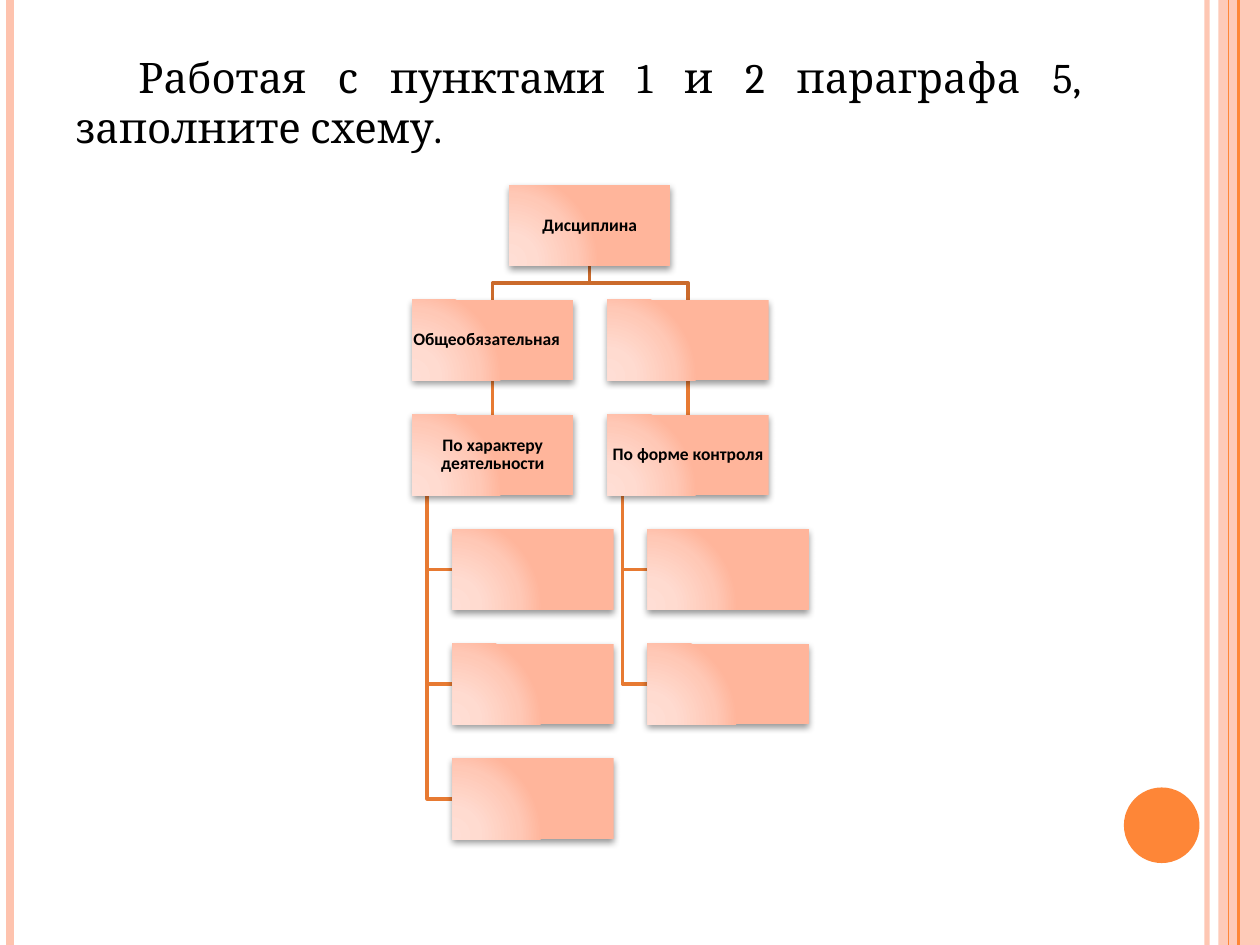
"""Build a slide with a discipline chart whose empty boxes are to be filled in."""
from typing import NamedTuple

from lxml import etree
from pptx import Presentation
from pptx import util as u
from pptx.dml.color import RGBColor
from pptx.enum import shapes, text
from pptx.oxml.ns import qn

BOX_WIDTH, BOX_HEIGHT = 1.28, 0.64
CHART_TOP, ROW_STEP = 1.47, 0.91
ROOT_LEFT, CHILD_INDENT, TRUNK_INDENT = 4.04, 0.32, 0.12
ROOT_LINE, BRANCH_LINE = "CB6B2C", "E77A32"
PINK, ORANGE = "FEC3AE", "FE8637"
GRADIENT = ((0, "FFDED5"), (30, "FFDBD0"), (75, "FFC8B6"), (100, "FFB59B"))
FOCUS = {"l": 5, "t": 100, "r": 120, "b": 10}


class Stripe(NamedTuple):
    x: float
    color: str
    width: float
    opacity: int = 100


class Branch(NamedTuple):
    left: float
    title: str
    subtitle: str
    children: int


STRIPES = (
    Stripe(9.58, PINK, 3, 93),
    Stripe(0.08, PINK, 4.5),
    Stripe(9.83, ORANGE, 1.5),
    Stripe(9.75, ORANGE, 0.75),
)
BRANCHES = (
    Branch(4.82, "", "По форме контроля", 2),
    Branch(3.27, "Общеобязательная\t", "По характеру деятельности", 3),
)


def rgb(code: str) -> RGBColor:
    return RGBColor.from_string(code)


def child(parent, tag: str, **values):
    attributes = {name: str(value) for name, value in values.items()}
    return etree.SubElement(parent, qn(tag), attributes)


def set_opacity(fill, percent: int) -> None:
    color = fill._xPr.find(qn("a:solidFill"))[0]
    child(color, "a:alpha", val=percent * 1000)


def row_top(row: int) -> float:
    return CHART_TOP + row * ROW_STEP


def add_line(page, start: tuple, end: tuple, color: str, width: float):
    points = [u.Inches(value) for value in (*start, *end)]
    line = page.shapes.add_connector(shapes.MSO_CONNECTOR.STRAIGHT, *points)
    line.line.color.rgb = rgb(color)
    line.line.width = u.Pt(width)
    child(line._element.spPr, "a:effectLst")
    return line


def add_elbow(page, points: list[tuple], color: str) -> None:
    start, *rest = [(u.Inches(x), u.Inches(y)) for x, y in points]
    builder = page.shapes.build_freeform(*start, scale=1.0)
    builder.add_line_segments(rest, close=False)
    elbow = builder.convert_to_shape()
    elbow.fill.background()
    elbow.line.color.rgb = rgb(color)
    elbow.line.width = u.Pt(2)
    elbow.shadow.inherit = False


def add_plain(page, kind, bounds: tuple, color: str):
    shape = page.shapes.add_shape(kind, *map(u.Inches, bounds))
    shape.fill.solid()
    shape.fill.fore_color.rgb = rgb(color)
    shape.line.fill.background()
    shape.shadow.inherit = False
    return shape


def add_span(para, words: str, font: str, size: float, bold: bool) -> None:
    span = para.add_run()
    span.text = words
    span.font.name, span.font.size, span.font.bold = font, u.Pt(size), bold
    span.font.color.rgb = rgb("000000")


def add_gradient_and_shadow(box) -> None:
    properties = box._element.spPr
    gradient = etree.Element(qn("a:gradFill"), rotWithShape="1")
    stops = child(gradient, "a:gsLst")
    for position, color in GRADIENT:
        stop = child(stops, "a:gs", pos=position * 1000)
        child(stop, "a:srgbClr", val=color)
    circle = child(gradient, "a:path", path="circle")
    child(circle, "a:fillToRect", **{side: value * 1000 for side, value in FOCUS.items()})
    properties.replace(properties.find(qn("a:solidFill")), gradient)
    shadow = child(properties.find(qn("a:effectLst")), "a:outerShdw", blurRad=u.Pt(4),
                   dist=u.Pt(2), dir=5400000, rotWithShape=0)
    child(child(shadow, "a:srgbClr", val="000000"), "a:alpha", val=40000)


def add_box(page, left: float, row: int, words: str = "") -> None:
    bounds = (left, row_top(row), BOX_WIDTH, BOX_HEIGHT)
    box = add_plain(page, shapes.MSO_SHAPE.RECTANGLE, bounds, GRADIENT[-1][1])
    add_gradient_and_shadow(box)
    if not words:
        return
    frame = box.text_frame
    frame.word_wrap = True
    frame.vertical_anchor = text.MSO_ANCHOR.MIDDLE
    frame.margin_left = frame.margin_right = u.Inches(0.01)
    frame.margin_top = frame.margin_bottom = u.Inches(0.01)
    para = frame.paragraphs[0]
    para.alignment = text.PP_ALIGN.CENTER
    para.line_spacing = 0.9
    para.space_after = u.Pt(3.5)
    add_span(para, words, "Calibri", 10, True)


def add_branch_lines(page, branch: Branch) -> None:
    trunk = branch.left + TRUNK_INDENT
    for row in reversed(range(3, 3 + branch.children)):
        middle = row_top(row) + BOX_HEIGHT / 2
        add_elbow(page, [(trunk, row_top(2) + BOX_HEIGHT), (trunk, middle),
                         (branch.left + CHILD_INDENT, middle)], BRANCH_LINE)
    center, root = branch.left + BOX_WIDTH / 2, ROOT_LEFT + BOX_WIDTH / 2
    add_line(page, (center, row_top(1) + BOX_HEIGHT), (center, row_top(2)), BRANCH_LINE, 2)
    bottom = row_top(0) + BOX_HEIGHT
    bend = (bottom + row_top(1)) / 2
    add_elbow(page, [(root, bottom), (root, bend), (center, bend), (center, row_top(1))],
              ROOT_LINE)


def add_branch_boxes(page, branch: Branch) -> None:
    add_box(page, branch.left, 1, branch.title)
    add_box(page, branch.left, 2, branch.subtitle)
    for row in range(3, 3 + branch.children):
        add_box(page, branch.left + CHILD_INDENT, row)


def add_frame(page) -> None:
    band = add_plain(page, shapes.MSO_SHAPE.RECTANGLE, (9.67, 0, 0.33, 7.5), PINK)
    set_opacity(band.fill, 87)
    for stripe in STRIPES:
        line = add_line(page, (stripe.x, 0), (stripe.x, 7.5), stripe.color, stripe.width)
        if stripe.opacity < 100:
            set_opacity(line.line.fill, stripe.opacity)
    add_plain(page, shapes.MSO_SHAPE.OVAL, (8.92, 6.25, 0.6, 0.6), ORANGE)


def add_task(page) -> None:
    frame = page.shapes.add_textbox(*map(u.Inches, (0.5, 0.36, 8.17, 6.72))).text_frame
    frame.word_wrap = True
    para = frame.paragraphs[0]
    para.alignment = text.PP_ALIGN.JUSTIFY
    para.space_before = u.Pt(6)
    add_span(para, "\tРаботая с пунктами 1 и 2 параграфа 5, заполните схему.", "Cambria", 24, False)


def main() -> None:
    deck = Presentation()
    deck.slide_width, deck.slide_height = u.Inches(10), u.Inches(7.5)
    page = deck.slides.add_slide(deck.slide_layouts[6])
    add_frame(page)
    add_task(page)
    for branch in BRANCHES:
        add_branch_lines(page, branch)
    add_box(page, ROOT_LEFT, 0, "Дисциплина")
    for branch in reversed(BRANCHES):
        add_branch_boxes(page, branch)
    deck.save("out.pptx")


if __name__ == "__main__":
    main()
